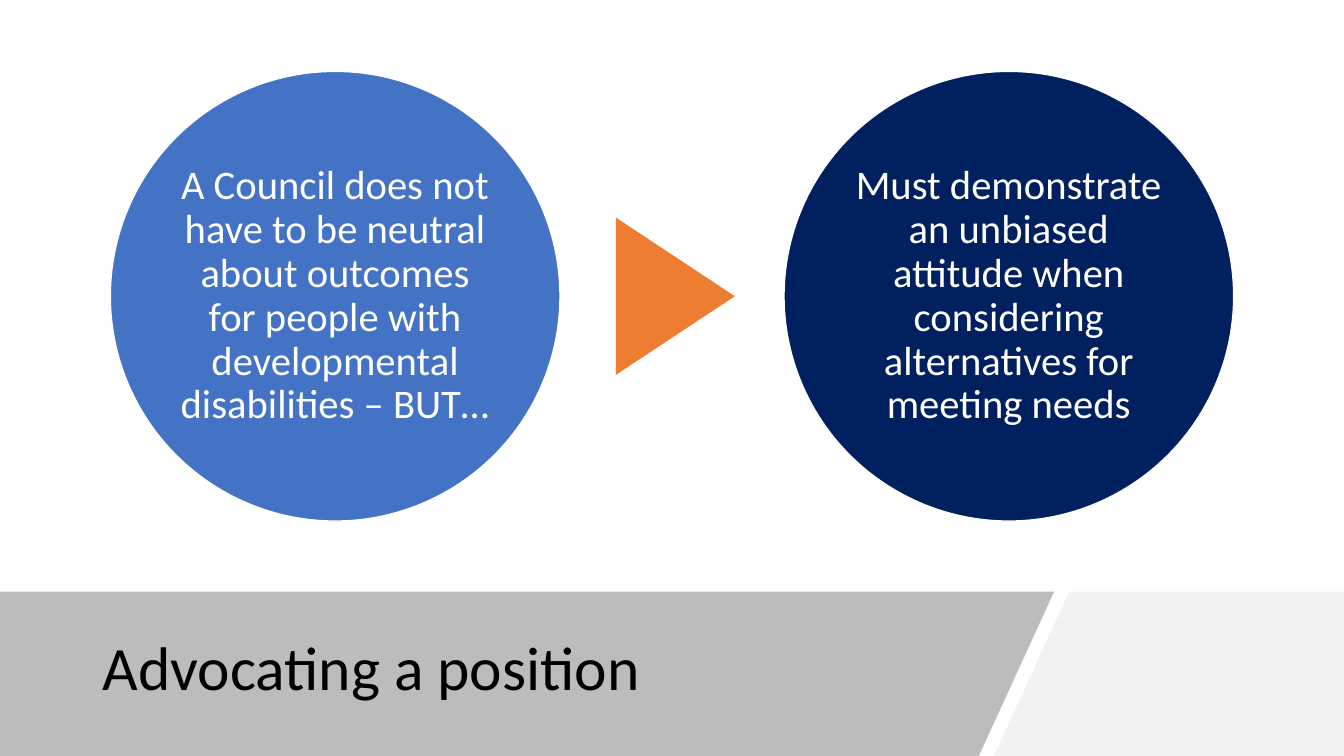
"""Builds the slide on advocating a position."""
from dataclasses import dataclass

from lxml import etree
from pptx import Presentation
from pptx.dml.color import RGBColor
from pptx.enum import shapes, text
from pptx.oxml import ns
from pptx.util import Pt

HUES = {"light": "F2F2F2", "grey": "595959", "blue": "4472C4", "navy": "002060",
        "orange": "ED7D31", "white": "FFFFFF", "black": "000000"}
FONT = "Calibri"
WIDE, HIGH = 960, 540
BAND_TOP = 422.6
DISC, DISC_TOP, SIDE = 321.2, 51, 78.8
ARROW_W, ARROW_H, ARROW_MID = 112.4, 85, 482.4


@dataclass
class Band:
    """A strip along the foot, given by its corners."""
    dots: list[tuple[float, float]]
    hue: str
    solid: int = 100


@dataclass
class Disc:
    """A circle with its wording."""
    left: float
    hue: str
    words: str


BANDS = [
    Band([(763.8, BAND_TOP), (WIDE, BAND_TOP), (WIDE, HIGH), (710, HIGH)], "light"),
    Band([(0, BAND_TOP), (753, BAND_TOP), (699.2, HIGH), (0, HIGH)], "grey", 40),
]
DISCS = [
    Disc(SIDE, "blue", "A Council does not have to be neutral about outcomes for people "
                       "with developmental disabilities – BUT…"),
    Disc(WIDE - SIDE - DISC, "navy", "Must demonstrate an unbiased attitude when considering "
                                     "alternatives for meeting needs"),
]


def tint(name: str) -> RGBColor:
    """Return the named colour."""
    return RGBColor.from_string(HUES[name])


def paint(shape, hue: str) -> None:
    """Fill a shape flat, with no line or shadow."""
    shape.shadow.inherit = False
    shape.fill.solid()
    shape.fill.fore_color.rgb = tint(hue)
    shape.line.fill.background()


def write(shape, words: str, size: float, hue: str, align) -> None:
    """Set one paragraph in the middle of a shape."""
    frame = shape.text_frame
    frame.word_wrap = True
    frame.auto_size = text.MSO_AUTO_SIZE.NONE
    frame.vertical_anchor = text.MSO_ANCHOR.MIDDLE
    para = frame.paragraphs[0]
    para.alignment = align
    para.line_spacing = 0.9
    run = para.add_run()
    run.text = words
    run.font.name = FONT
    run.font.size = Pt(size)
    run.font.color.rgb = tint(hue)


def add_band(slide, band: Band) -> None:
    """Draw a strip, see-through where asked."""
    dots = [(Pt(x), Pt(y)) for x, y in band.dots]
    pen = slide.shapes.build_freeform(*dots[0])
    pen.add_line_segments(dots[1:], close=True)
    shape = pen.convert_to_shape()
    paint(shape, band.hue)
    if band.solid < 100:
        clr = shape.fill._xPr.find(".//" + ns.qn("a:srgbClr"))
        etree.SubElement(clr, ns.qn("a:alpha"), val=str(band.solid * 1000))


def add_disc(slide, disc: Disc) -> None:
    """Draw a circle with its wording inside."""
    shape = slide.shapes.add_shape(shapes.MSO_SHAPE.OVAL, Pt(disc.left), Pt(DISC_TOP),
                                   Pt(DISC), Pt(DISC))
    paint(shape, disc.hue)
    shape.line.color.rgb = tint("white")
    shape.line.width = Pt(1)
    frame = shape.text_frame
    frame.margin_left = frame.margin_right = Pt(2.9)
    frame.margin_top = frame.margin_bottom = Pt(2.9)
    write(shape, disc.words, 29, "white", text.PP_ALIGN.CENTER)


def add_arrow(slide) -> None:
    """Draw the triangle that points from one circle to the next."""
    mid = DISC_TOP + DISC / 2
    shape = slide.shapes.add_shape(shapes.MSO_SHAPE.ISOSCELES_TRIANGLE,
                                   Pt(ARROW_MID - ARROW_W / 2), Pt(mid - ARROW_H / 2),
                                   Pt(ARROW_W), Pt(ARROW_H))
    shape.rotation = 90
    paint(shape, "orange")


def add_title(slide) -> None:
    """Set the title over the strips."""
    title = slide.shapes.title
    title.left, title.top, title.width, title.height = Pt(66), Pt(435.6), Pt(636), Pt(86.4)
    write(title, "Advocating a position", 44, "black", text.PP_ALIGN.LEFT)
    slide.shapes._spTree.append(title._element)


def main() -> None:
    """Build and save the slide."""
    deck = Presentation()
    deck.slide_width, deck.slide_height = Pt(WIDE), Pt(HIGH)
    slide = deck.slides.add_slide(deck.slide_layouts[5])
    for band in BANDS:
        add_band(slide, band)
    add_title(slide)
    first, last = DISCS
    add_disc(slide, first)
    add_arrow(slide)
    add_disc(slide, last)
    deck.save("out.pptx")


if __name__ == "__main__":
    main()
